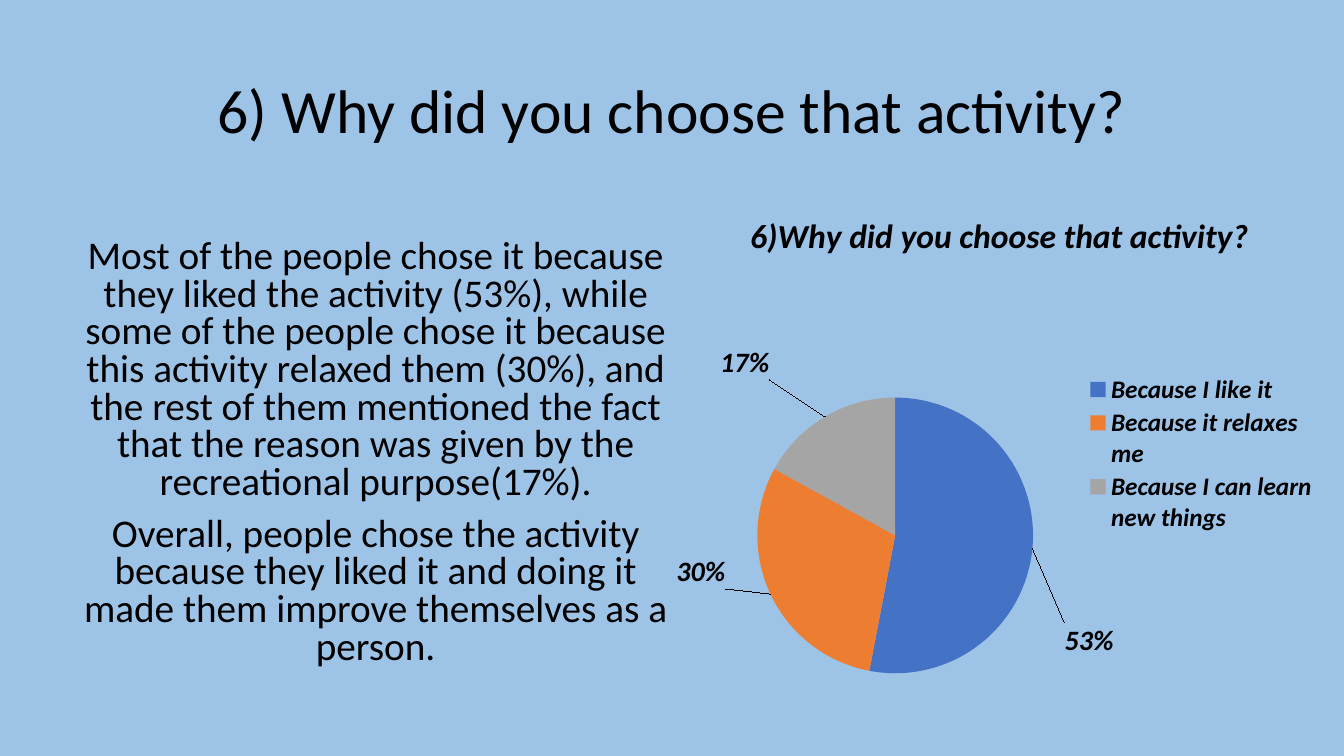
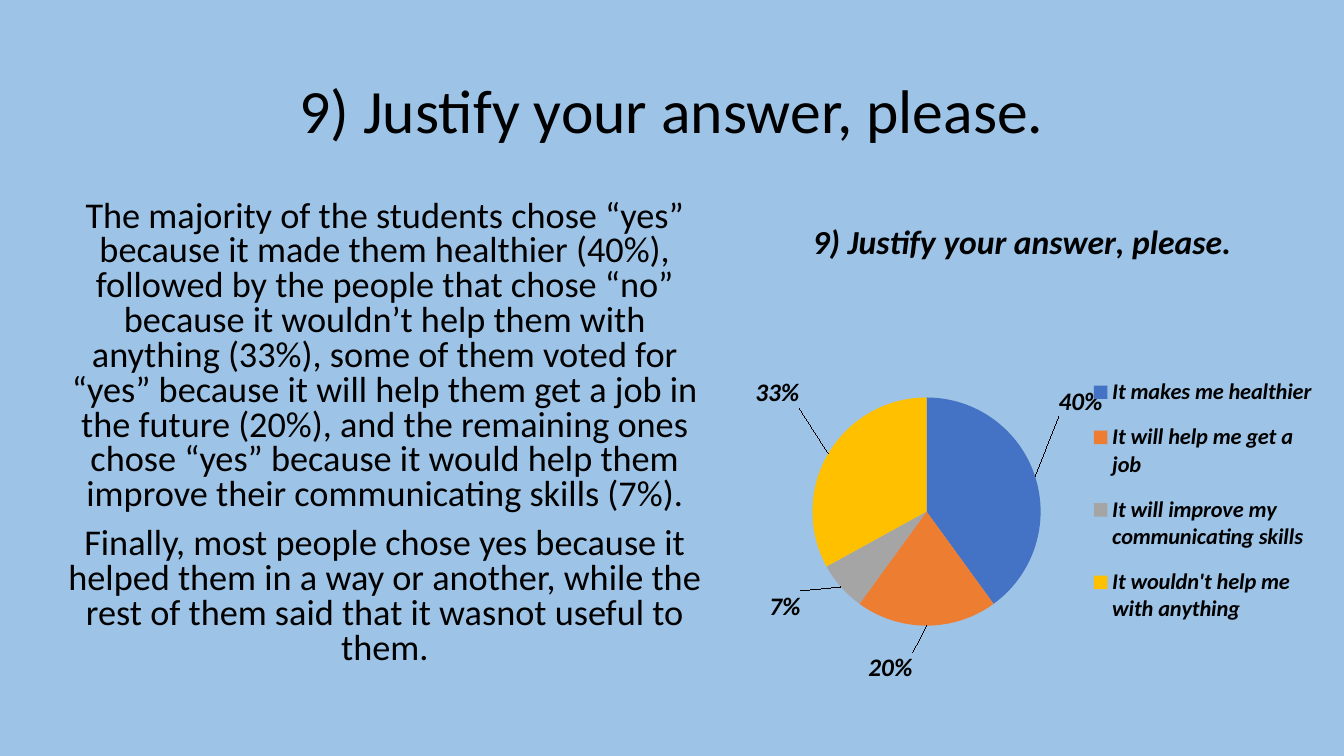
from lxml.etree import SubElement
from pptx import Presentation
from pptx.chart.data import CategoryChartData
from pptx.dml.color import RGBColor
from pptx.enum.chart import XL_CHART_TYPE, XL_LABEL_POSITION, XL_LEGEND_POSITION
from pptx.enum.text import MSO_ANCHOR, PP_ALIGN
from pptx.oxml.ns import qn
from pptx.util import Pt

FONT = "Calibri"
BACKGROUND = "9DC3E6"
TEXT = "000000"
SLICES = ["4472C4", "ED7D31", "A5A5A5", "FFC000"]

# Boxes are (left, top, width, height) in points; layouts are chart fractions
SLIDES = [
    {
        "title": "6) Why did you choose that activity?",
        "body": [
            "Most of the people chose it because they liked the activity (53%), "
            "while some of the people chose it because this activity relaxed them "
            "(30%), and the rest of them mentioned the fact that the reason was "
            "given by the recreational purpose(17%).",
            "Overall, people chose the activity because they liked it and doing it "
            "made them improve themselves as a person.",
        ],
        "body_box": (47.5, 167.5, 441.5, 318.5), "body_size": 28,
        "chart_title": "6)Why did you choose that activity?",
        "chart_box": (480, 133, 469, 378),
        "data": {"Because I like it": 53, "Because it relaxes me": 30,
                 "Because I can learn new things": 17},
        "legend_size": 18, "label_size": 20,
        "title_at": (0.11, 0.04),
        "plot_at": (0.13, 0.34, 0.42, 0.64),
        "legend_at": (0.65, 0.35, 0.34, 0.31),
        "label_shifts": [(0.04, 0.14), (-0.06, -0.08), (-0.08, -0.06)],
    },
    {
        "title": "9) Justify your answer, please.",
        "body": [
            "The majority of the students chose “yes” because it made them "
            "healthier (40%), followed by the people that chose “no” because it "
            "wouldn’t help them with anything (33%), some of them voted for “yes” "
            "because it will help them get a job in the future (20%), and the "
            "remaining ones chose “yes” because it would help them improve their "
            "communicating skills (7%).",
            "Finally, most people chose yes because it helped them in a way or "
            "another, while the rest of them said that it wasnot useful to them.",
        ],
        "body_box": (33, 139.5, 484, 346.5), "body_size": 25.9,
        "chart_title": "9) Justify your answer, please.",
        "chart_box": (516, 133, 429, 378),
        "data": {"It makes me healthier": 40, "It will help me get a job": 20,
                 "It will improve my communicating skills": 7,
                 "It wouldn't help me with anything": 33},
        "legend_size": 16, "label_size": 18,
        "title_at": (0.14, 0.05),
        "plot_at": (0.15, 0.33, 0.38, 0.57),
        "legend_at": (0.61, 0.33, 0.38, 0.53),
        "label_shifts": [(0.03, -0.11), (-0.06, 0.04), (-0.06, 0), (-0.04, -0.08)],
    },
]


def style(font, size, emphasis=False):
    font.name = FONT
    font.size = Pt(size)
    font.bold = font.italic = emphasis
    font.color.rgb = RGBColor.from_string(TEXT)


def set_layout(parent, index, values, edge=True):
    """Give a chart element a manual layout, as its child number index."""
    for old in parent.findall(qn("c:layout")):
        parent.remove(old)
    layout = SubElement(parent, qn("c:layout"))
    parent.insert(index, layout)
    manual = SubElement(layout, qn("c:manualLayout"))
    settings = []
    if parent.tag == qn("c:plotArea"):
        settings.append(("layoutTarget", "inner"))
    if edge:
        settings += [("xMode", "edge"), ("yMode", "edge")]
    settings += zip("xywh", values)
    for name, value in settings:
        SubElement(manual, qn("c:" + name)).set("val", str(value))


prs = Presentation()
prs.slide_width, prs.slide_height = Pt(960), Pt(540)
fill = prs.slide_master.background.fill
fill.solid()
fill.fore_color.rgb = RGBColor.from_string(BACKGROUND)

for item in SLIDES:
    s = prs.slides.add_slide(prs.slide_layouts[5])

    # Title
    sp = s.shapes.title
    sp.left, sp.top, sp.width, sp.height = Pt(66), Pt(28.75), Pt(828), Pt(104.5)
    tf = sp.text_frame
    tf.text = item["title"]
    tf.vertical_anchor = MSO_ANCHOR.MIDDLE
    p = tf.paragraphs[0]
    p.alignment = PP_ALIGN.CENTER
    p.line_spacing = 0.9
    style(p.font, 44)

    # Commentary
    tf = s.shapes.add_textbox(*map(Pt, item["body_box"])).text_frame
    tf.word_wrap = True
    tf.text = "\n".join(item["body"])
    for p in tf.paragraphs:
        p.alignment = PP_ALIGN.CENTER
        p.line_spacing = 0.8
        p.space_before = Pt(10)
        style(p.font, item["body_size"])

    # Pie chart
    data = CategoryChartData()
    data.categories = item["data"].keys()
    data.add_series("Series 1", item["data"].values())
    chart = s.shapes.add_chart(
        XL_CHART_TYPE.PIE, *map(Pt, item["chart_box"]), data).chart
    style(chart.font, 10)
    plot = chart.plots[0]
    plot.vary_by_categories = True
    root = chart._chartSpace
    set_layout(root.find(".//" + qn("c:plotArea")), 0, item["plot_at"])

    # Chart title and legend
    chart.has_title = True
    tf = chart.chart_title.text_frame
    tf.text = item["chart_title"]
    style(tf.paragraphs[0].font, 24, True)
    set_layout(root.find(".//" + qn("c:title")), 1, item["title_at"])
    chart.has_legend = True
    chart.legend.position = XL_LEGEND_POSITION.RIGHT
    chart.legend.include_in_layout = False
    style(chart.legend.font, item["legend_size"], True)
    set_layout(root.find(".//" + qn("c:legend")), 1, item["legend_at"])

    # Slices and their percentages
    series = plot.series[0]
    labels = series.data_labels
    labels.show_value = False
    labels.show_percentage = True
    labels.position = XL_LABEL_POSITION.BEST_FIT
    style(labels.font, item["label_size"], True)
    for i, shift in enumerate(item["label_shifts"]):
        point = series.points[i]
        point.format.fill.solid()
        point.format.fill.fore_color.rgb = RGBColor.from_string(SLICES[i])
        point.format.line.fill.background()
        style(point.data_label.font, item["label_size"], True)
        point.data_label.position = XL_LABEL_POSITION.BEST_FIT
        label = root.findall(".//" + qn("c:dLbl"))[i]
        label.find(qn("c:showVal")).set("val", "0")
        label.find(qn("c:showPercent")).set("val", "1")
        set_layout(label, 1, shift, edge=False)

prs.save("out.pptx")
